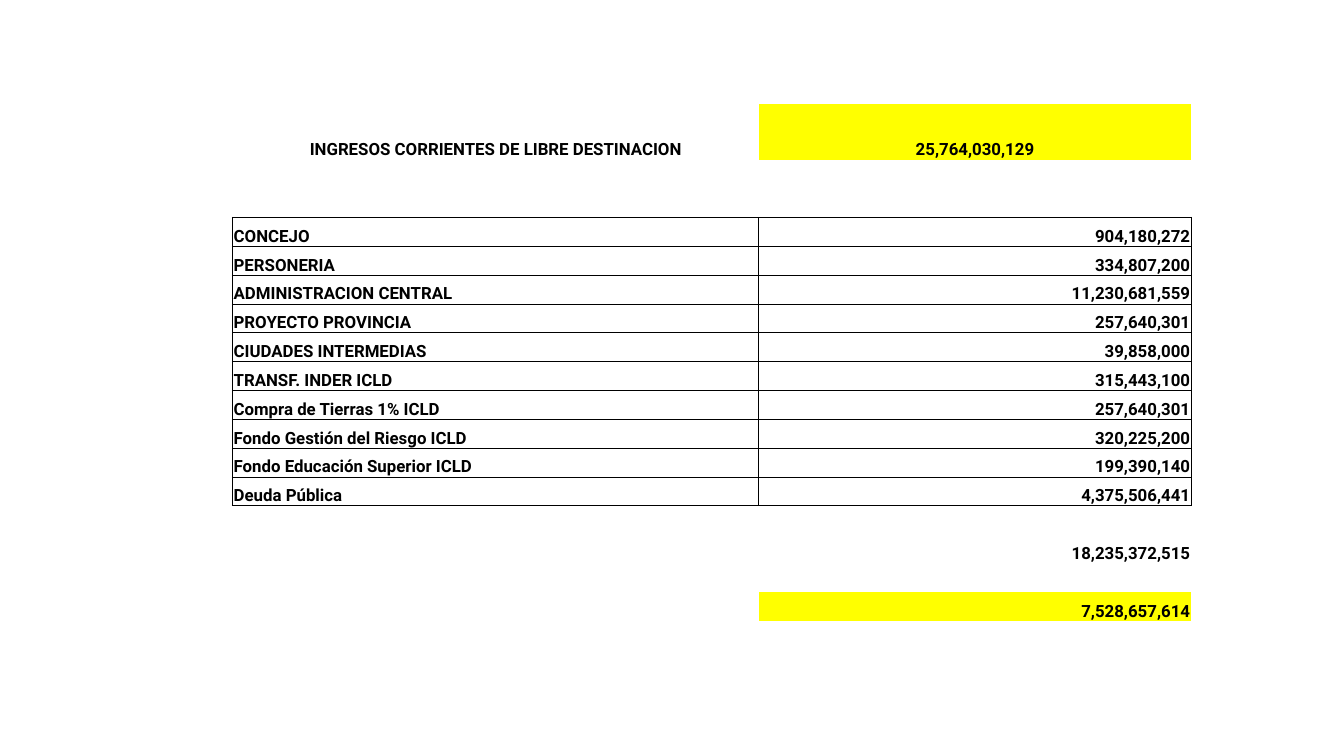
import pptx
import pptx.util
import pptx.dml.color
import pptx.enum.text
import pptx.oxml.ns
from lxml import etree

Pt = pptx.util.Pt
Align = pptx.enum.text.PP_ALIGN
qn = pptx.oxml.ns.qn
COLORS = {"text": "000000", "border": "000000", "plain": "FFFFFF", "highlight": "FFFF00"}

# Table content: blank pairs are the spacer rows
HEADER = ("INGRESOS CORRIENTES DE LIBRE DESTINACION", "25,764,030,129")
EXPENSES = [
    ("CONCEJO", "904,180,272"),
    ("PERSONERIA", "334,807,200"),
    ("ADMINISTRACION CENTRAL", "11,230,681,559"),
    ("PROYECTO PROVINCIA", "257,640,301"),
    ("CIUDADES INTERMEDIAS", "39,858,000"),
    ("TRANSF. INDER ICLD", "315,443,100"),
    ("Compra de Tierras 1% ICLD", "257,640,301"),
    ("Fondo Gestión del Riesgo ICLD", "320,225,200"),
    ("Fondo Educación Superior ICLD", "199,390,140"),
    ("Deuda Pública", "4,375,506,441"),
]
SPACER = ("", "")
rows = [HEADER, SPACER, SPACER, *EXPENSES, SPACER, ("", "18,235,372,515"), SPACER, ("", "7,528,657,614")]
first_expense = 3
last_expense = first_expense + len(EXPENSES) - 1
highlighted = (0, len(rows) - 1)


def set_border(cell, side, visible):
    line = etree.SubElement(cell._tc.get_or_add_tcPr(), qn("a:ln" + side), w=str(Pt(0.5)))
    if visible:
        fill = etree.SubElement(line, qn("a:solidFill"))
        etree.SubElement(fill, qn("a:srgbClr"), val=COLORS["border"])
    else:
        etree.SubElement(line, qn("a:noFill"))


# Slide
presentation = pptx.Presentation()
presentation.slide_width = Pt(720)
presentation.slide_height = Pt(405)
slide = presentation.slides.add_slide(presentation.slide_layouts[6])

# Table grid
header_height, row_height = 30, 15.45
column_widths = (281.9, 231.8)
frame = slide.shapes.add_table(
    len(rows), 2, Pt(124.5), Pt(55.6),
    Pt(sum(column_widths)), Pt(header_height + row_height * (len(rows) - 1)))
table = frame.table
table.first_row = False
table.horz_banding = False
for column, width in zip(table.columns, column_widths):
    column.width = Pt(width)
for index, row in enumerate(table.rows):
    row.height = Pt(row_height if index else header_height)

# Cells
for row_index, texts in enumerate(rows):
    in_grid = first_expense <= row_index <= last_expense
    for column_index, text in enumerate(texts):
        cell = table.cell(row_index, column_index)
        cell.margin_left = cell.margin_right = cell.margin_top = Pt(0.7)
        cell.margin_bottom = Pt(0)
        cell.vertical_anchor = pptx.enum.text.MSO_ANCHOR.BOTTOM

        # Borders enclose the expense rows only
        for side in "LR":
            set_border(cell, side, in_grid)
        set_border(cell, "T", in_grid or row_index == last_expense + 1)
        set_border(cell, "B", in_grid or row_index == first_expense - 1)

        marked = column_index == 1 and row_index in highlighted
        cell.fill.solid()
        cell.fill.fore_color.rgb = pptx.dml.color.RGBColor.from_string(
            COLORS["highlight" if marked else "plain"])

        paragraph = cell.text_frame.paragraphs[0]
        if row_index == 0:
            paragraph.alignment = Align.CENTER
        else:
            paragraph.alignment = Align.RIGHT if column_index else Align.LEFT
        if text:
            run = paragraph.add_run()
            run.text = text
            run.font.name = "Roboto"
            run.font.size = Pt(9)
            run.font.bold = True
            run.font.color.rgb = pptx.dml.color.RGBColor.from_string(COLORS["text"])
        else:
            # Keeps blank cells from stretching their row
            etree.SubElement(paragraph._p, qn("a:endParaRPr"), sz="900")

presentation.save("out.pptx")
